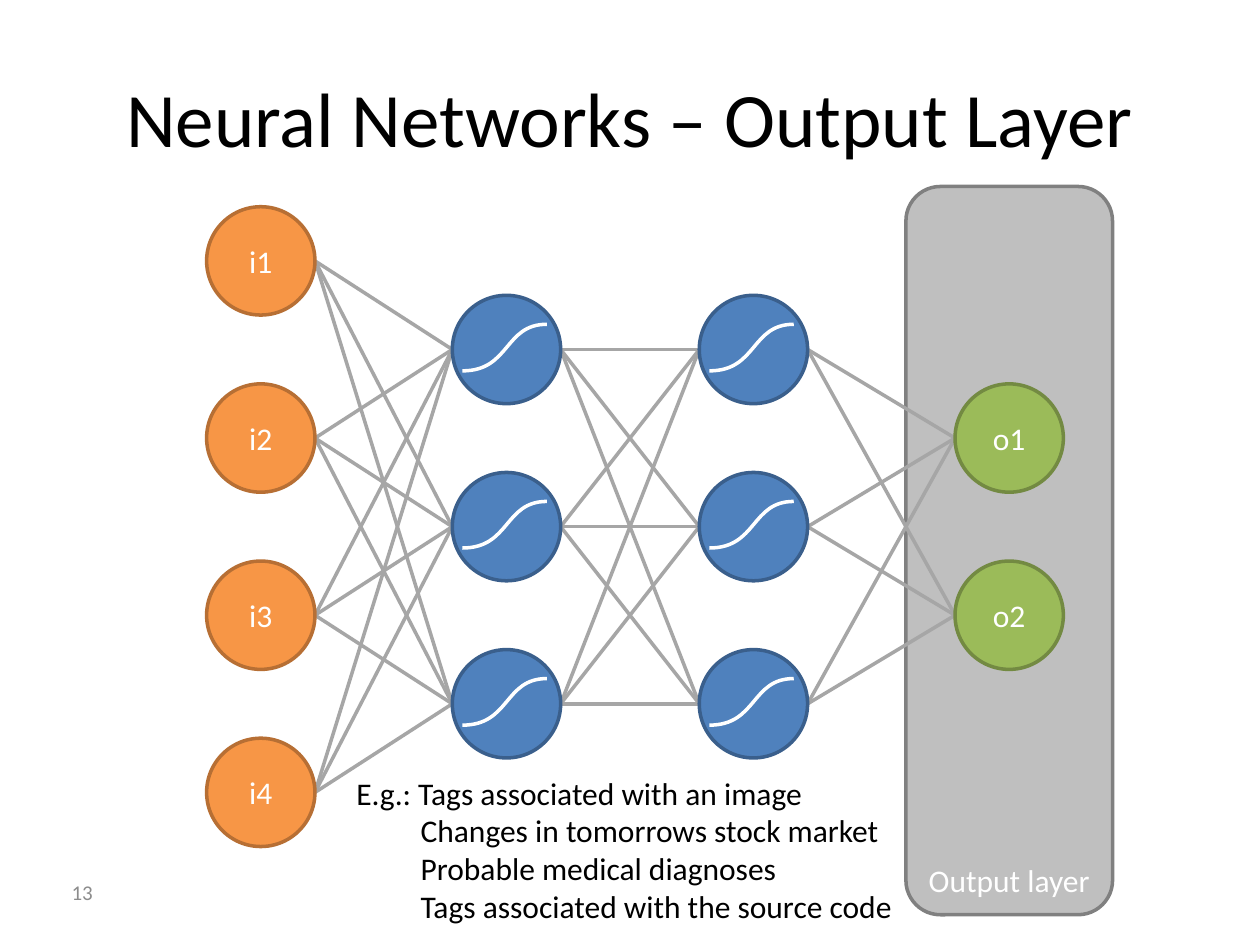
from dataclasses import dataclass
from itertools import pairwise, product

from lxml.etree import SubElement
from pptx import Presentation
from pptx.dml.color import RGBColor
from pptx.enum.shapes import MSO_CONNECTOR as CXN, MSO_SHAPE as SHAPE
from pptx.enum.text import MSO_ANCHOR as ANCHOR, MSO_AUTO_SIZE as FIT, PP_ALIGN as ALIGN
from pptx.oxml.ns import qn
from pptx.util import Inches, Pt


@dataclass(frozen=True)
class Theme:
    font: str = "Calibri"
    title: int = 44
    body: int = 18
    small: int = 12
    stroke: int = 2
    black: str = "000000"
    white: str = "FFFFFF"
    muted: str = "8C8C8C"
    panel: str = "808080"
    link: str = "A6A6A6"
    inputs: tuple = ("F79646", "B76F34")
    hidden: tuple = ("4F81BD", "3A5F8C")
    outputs: tuple = ("9BBB59", "738A42")


T = Theme()
DIAMETER = 0.86
ROW_PITCH = 1.406
MIDDLE = 4.18
INDENT = 0.51
LAYERS = [
    (2.07, T.inputs, ["i1", "i2", "i3", "i4"]),
    (4.02, T.hidden, [""] * 3),
    (5.98, T.hidden, [""] * 3),
    (8.01, T.outputs, ["o1", "o2"]),
]
SIGMOID = [(-0.35, 0.17), (0.03, 0.17), (-0.02, -0.2), (0.32, -0.2)]
EXAMPLES = [
    "E.g.: Tags associated with an image",
    "Changes in tomorrows stock market",
    "Probable medical diagnoses",
    "Tags associated with the source code",
]


def rgb(color):
    return RGBColor.from_string(color)


def place(s, *box):
    s.left, s.top, s.width, s.height = map(Inches, box)


def write(s, *lines, size=T.body, color=T.white, align=ALIGN.CENTER,
          anchor=ANCHOR.MIDDLE, indent=0, fit=FIT.NONE):
    tf = s.text_frame
    tf.word_wrap = True
    tf.auto_size = fit
    tf.vertical_anchor = anchor
    for i, line in enumerate(lines):
        p = tf.add_paragraph() if i else tf.paragraphs[0]
        p.alignment = align
        if indent:
            pPr = p._p.get_or_add_pPr()
            pPr.set("marL", str(Inches(indent)))
            pPr.set("indent", str(0 if i else -Inches(indent)))
        r = p.add_run()
        r.text = line
        r.font.name, r.font.size = T.font, Pt(size)
        r.font.color.rgb = rgb(color)


def stroke(s, color):
    s.line.color.rgb = rgb(color)
    s.line.width = Pt(T.stroke)


def add_shape(slide, kind, box, fill, line):
    s = slide.shapes.add_shape(kind, *map(Inches, box))
    s.shadow.inherit = False
    s.fill.solid()
    s.fill.fore_color.rgb = rgb(fill)
    stroke(s, line)
    return s


def add_text(slide, box, *lines, **fmt):
    s = slide.shapes.add_textbox(*map(Inches, box))
    write(s, *lines, **fmt)


def add_panel(slide):
    s = add_shape(slide, SHAPE.ROUNDED_RECTANGLE, (7.19, 1.48, 1.64, 5.78),
                  T.panel, T.panel)
    color = s.fill._xPr.find(qn("a:solidFill"))[0]
    SubElement(color, qn("a:alpha"), val="50000")
    write(s, "Output layer", anchor=ANCHOR.BOTTOM)


def add_link(slide, start, end):
    (x1, y1), (x2, y2) = start, end
    radius = DIAMETER / 2
    s = slide.shapes.add_connector(
        CXN.STRAIGHT, *map(Inches, (x1 + radius, y1, x2 - radius, y2)))
    stroke(s, T.link)
    SubElement(s._element.spPr, qn("a:effectLst"))


def add_node(slide, center, colors, label):
    x, y = (c - DIAMETER / 2 for c in center)
    s = add_shape(slide, SHAPE.OVAL, (x, y, DIAMETER, DIAMETER), *colors)
    if label:
        write(s, label)


def add_sigmoid(slide, center):
    x, y = center
    points = [(Inches(x + dx), Inches(y + dy)) for dx, dy in SIGMOID]
    builder = slide.shapes.build_freeform(*points[0])
    builder.add_line_segments(points[1:], close=False)
    s = builder.convert_to_shape()
    segments = list(s._element.iter(qn("a:lnTo")))
    curve = SubElement(segments[0].getparent(), qn("a:cubicBezTo"))
    for segment in segments:
        curve.append(segment[0])
        segment.getparent().remove(segment)
    s.shadow.inherit = False
    s.fill.background()
    stroke(s, T.white)


def layer_centers(x, count):
    top = MIDDLE - (count - 1) * ROW_PITCH / 2
    return [(x, top + i * ROW_PITCH) for i in range(count)]


def add_network(slide):
    centers = [layer_centers(x, len(labels)) for x, _, labels in LAYERS]
    for left, right in pairwise(centers):
        for start, end in product(left, right):
            add_link(slide, start, end)
    for layer, (_, colors, labels) in zip(centers, LAYERS):
        for center, label in zip(layer, labels):
            add_node(slide, center, colors, label)
    for layer in centers[1:-1]:
        for center in layer:
            add_sigmoid(slide, center)


def main():
    prs = Presentation()
    prs.slide_width, prs.slide_height = Inches(10), Inches(7.5)
    slide = prs.slides.add_slide(prs.slide_layouts[5])
    title = slide.shapes.title
    place(title, 0.5, 0.3, 9, 1.25)
    write(title, "Neural Networks – Output Layer", size=T.title, color=T.black)
    add_panel(slide)
    add_network(slide)
    add_text(slide, (2.73, 6.09, 5.78, 1.31), *EXAMPLES, color=T.black,
             align=ALIGN.LEFT, anchor=ANCHOR.TOP, indent=INDENT,
             fit=FIT.SHAPE_TO_FIT_TEXT)
    add_text(slide, (0.47, 6.88, 2.33, 0.4), "13", size=T.small,
             color=T.muted, align=ALIGN.LEFT)
    prs.save("out.pptx")


if __name__ == "__main__":
    main()
